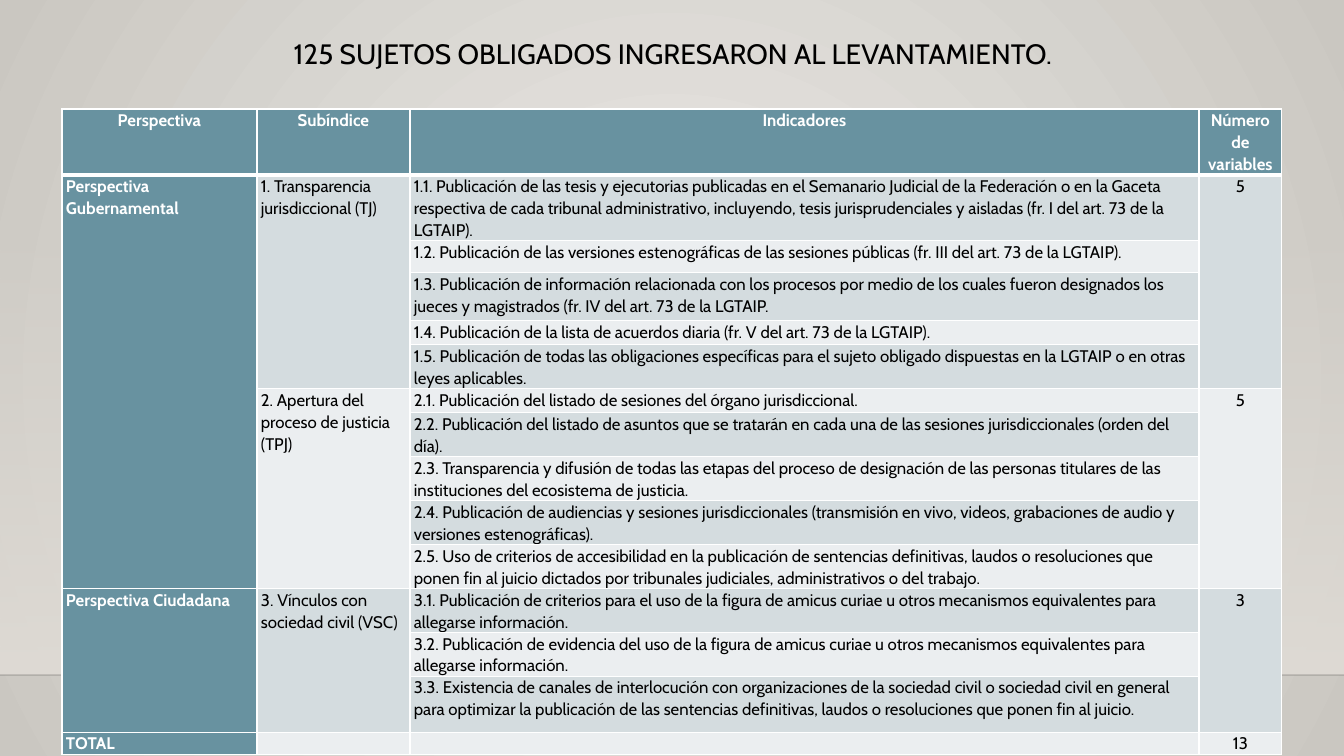
from dataclasses import dataclass

from lxml import etree
from pptx import Presentation
from pptx import util as u
from pptx.dml.color import RGBColor
from pptx.enum import shapes, text
from pptx.oxml.ns import qn

PX = 914400 / 100.8
FONT = "Cabin"
COLORS = {
    "glow": "ECEAE7", "edge": "CAC7C1", "panel": "DFDBD5", "rule": "000001",
    "teal": "6892A0", "odd": "D4DCDF", "even": "EBEEF0",
    "white": "FFFFFF", "black": "000000",
}
HEADERS = ["Perspectiva", "Subíndice", "Indicadores", "Número de variables"]
COL_WIDTHS = [195, 153, 789, 83]
ROW_HEIGHTS = [48, 64, 32, 48, 24, 40, 24, 32, 40, 40, 44, 40, 32, 56, 11]


@dataclass
class Subindex:
    name: str
    indicators: list[str]


@dataclass
class Perspective:
    name: str
    subindices: list[Subindex]

    def rows(self) -> int:
        return sum(len(sub.indicators) for sub in self.subindices)


PERSPECTIVES = [
    Perspective("Perspectiva Gubernamental", [
        Subindex("1. Transparencia jurisdiccional (TJ)", [
            "1.1. Publicación de las tesis y ejecutorias publicadas en el Semanario Judicial de la "
            "Federación o en la Gaceta respectiva de cada tribunal administrativo, incluyendo, tesis "
            "jurisprudenciales y aisladas (fr. I del art. 73 de la LGTAIP).",
            "1.2. Publicación de las versiones estenográficas de las sesiones públicas (fr. III del "
            "art. 73 de la LGTAIP).",
            "1.3. Publicación de información relacionada con los procesos por medio de los cuales "
            "fueron designados los jueces y magistrados (fr. IV del art. 73 de la LGTAIP.",
            "1.4. Publicación de la lista de acuerdos diaria (fr. V del art. 73 de la LGTAIP).",
            "1.5. Publicación de todas las obligaciones específicas para el sujeto obligado "
            "dispuestas en la LGTAIP o en otras leyes aplicables.",
        ]),
        Subindex("2. Apertura del proceso de justicia (TPJ)", [
            "2.1. Publicación del listado de sesiones del órgano jurisdiccional.",
            "2.2. Publicación del listado de asuntos que se tratarán en cada una de las sesiones "
            "jurisdiccionales (orden del día).",
            "2.3. Transparencia y difusión de todas las etapas del proceso de designación de las "
            "personas titulares de las instituciones del ecosistema de justicia.",
            "2.4. Publicación de audiencias y sesiones jurisdiccionales (transmisión en vivo, "
            "videos, grabaciones de audio y versiones estenográficas).",
            "2.5. Uso de criterios de accesibilidad en la publicación de sentencias definitivas, "
            "laudos o resoluciones que ponen fin al juicio dictados por tribunales judiciales, "
            "administrativos o del trabajo.",
        ]),
    ]),
    Perspective("Perspectiva Ciudadana", [
        Subindex("3. Vínculos con sociedad civil (VSC)", [
            "3.1. Publicación de criterios para el uso de la figura de amicus curiae u otros "
            "mecanismos equivalentes para allegarse información.",
            "3.2. Publicación de evidencia del uso de la figura de amicus curiae u otros "
            "mecanismos equivalentes para allegarse información.",
            "3.3. Existencia de canales de interlocución con organizaciones de la sociedad civil o "
            "sociedad civil en general para optimizar la publicación de las sentencias definitivas, "
            "laudos o resoluciones que ponen fin al juicio.",
        ]),
    ]),
]


def px(n: int) -> u.Emu:
    return u.Emu(round(n * PX))


def rgb(name: str) -> RGBColor:
    return RGBColor.from_string(COLORS[name])


def set_gradient(fill, start: str, end: str) -> None:
    fill.gradient()
    for stop, name, position in zip(fill.gradient_stops, (start, end), (0, 1)):
        stop.color.rgb = rgb(name)
        stop.position = position


def set_opacity(shape, percent: int) -> None:
    """Apply opacity to the first colour of the shape."""
    color = next(shape._element.spPr.iter(qn("a:srgbClr")))
    etree.SubElement(color, qn("a:alpha"), val=str(percent * 1000))


def format_paragraph(p, size: int, color: str, bold: bool, centered: bool) -> None:
    p.alignment = text.PP_ALIGN.CENTER if centered else text.PP_ALIGN.LEFT
    p.line_spacing = 1.07
    p.space_before, p.space_after = u.Pt(0), u.Pt(8)
    p.font.name, p.font.size, p.font.bold = FONT, u.Pt(size), bold
    p.font.color.rgb = rgb(color)


def draw_background(s) -> None:
    set_gradient(s.background.fill, "glow", "edge")
    lin = next(s._element.iter(qn("a:lin")))
    circle = etree.Element(qn("a:path"), path="circle")
    etree.SubElement(circle, qn("a:fillToRect"), dict.fromkeys("ltrb", "50000"))
    lin.getparent().replace(lin, circle)

    panel = s.shapes.add_shape(shapes.MSO_SHAPE.RECTANGLE, 0, px(223), px(1344), px(452))
    panel.shadow.inherit = False
    panel.line.fill.background()
    set_gradient(panel.fill, "panel", "panel")
    panel.fill.gradient_angle = 270
    set_opacity(panel, 0)

    rule = s.shapes.add_connector(shapes.MSO_CONNECTOR.STRAIGHT, 0, px(675), px(1344), px(675))
    rule.line.color.rgb = rgb("rule")
    rule.line.width = u.Pt(1)
    set_opacity(rule, 20)
    etree.SubElement(rule._element.spPr, qn("a:effectLst"))


def draw_title(s) -> None:
    title = s.shapes.title
    title.left, title.top, title.width, title.height = px(197), px(25), px(952), px(55)
    tf = title.text_frame
    tf.text = "125 SUJETOS OBLIGADOS INGRESARON AL LEVANTAMIENTO."
    tf.auto_size = text.MSO_AUTO_SIZE.NONE
    tf.vertical_anchor = text.MSO_ANCHOR.MIDDLE
    format_paragraph(tf.paragraphs[0], 20, "black", False, True)


def set_borders(cell, row: int) -> None:
    """White grid, with a thick line under the header."""
    widths = {"L": 1, "R": 1, "T": 3 if row == 1 else 1, "B": 3 if row == 0 else 1}
    tc_pr = cell._tc.get_or_add_tcPr()
    for side, width in widths.items():
        ln = etree.SubElement(tc_pr, qn(f"a:ln{side}"), w=str(u.Pt(width)))
        fill = etree.SubElement(ln, qn("a:solidFill"))
        etree.SubElement(fill, qn("a:srgbClr"), val=COLORS["white"])


def format_cell(cell, row: int, col: int) -> None:
    heading = row == 0 or col == 0
    set_borders(cell, row)
    cell.fill.solid()
    cell.fill.fore_color.rgb = rgb("teal" if heading else "odd" if row % 2 else "even")
    cell.margin_left = cell.margin_right = px(4)
    cell.margin_top = cell.margin_bottom = 0
    format_paragraph(cell.text_frame.paragraphs[0], 12, "white" if heading else "black",
                     heading, row == 0 or col == 3)


def write_span(table, row: int, col: int, height: int, words: str) -> None:
    """Merge height cells downwards and write into them."""
    cell = table.cell(row, col)
    if height > 1:
        cell.merge(table.cell(row + height - 1, col))
    cell.text = words


def draw_table(s) -> None:
    frame = s.shapes.add_table(len(ROW_HEIGHTS), len(COL_WIDTHS),
                               px(62), px(109), px(1220), px(622))
    table = frame.table
    for column, width in zip(table.columns, COL_WIDTHS):
        column.width = px(width)
    for table_row, height in zip(table.rows, ROW_HEIGHTS):
        table_row.height = px(height)
    frame.height = px(622)

    for col, header in enumerate(HEADERS):
        table.cell(0, col).text = header
    row = 1
    for perspective in PERSPECTIVES:
        write_span(table, row, 0, perspective.rows(), perspective.name)
        for sub in perspective.subindices:
            count = len(sub.indicators)
            write_span(table, row, 1, count, sub.name)
            write_span(table, row, 3, count, str(count))
            for indicator in sub.indicators:
                table.cell(row, 2).text = indicator
                row += 1
    table.cell(row, 0).text = "TOTAL"
    table.cell(row, 3).text = str(row - 1)

    for r in range(len(ROW_HEIGHTS)):
        for c in range(len(COL_WIDTHS)):
            format_cell(table.cell(r, c), r, c)


def main() -> None:
    prs = Presentation()
    prs.slide_width, prs.slide_height = px(1344), px(756)
    s = prs.slides.add_slide(prs.slide_layouts[5])
    draw_background(s)
    draw_title(s)
    draw_table(s)
    prs.save("out.pptx")


if __name__ == "__main__":
    main()
